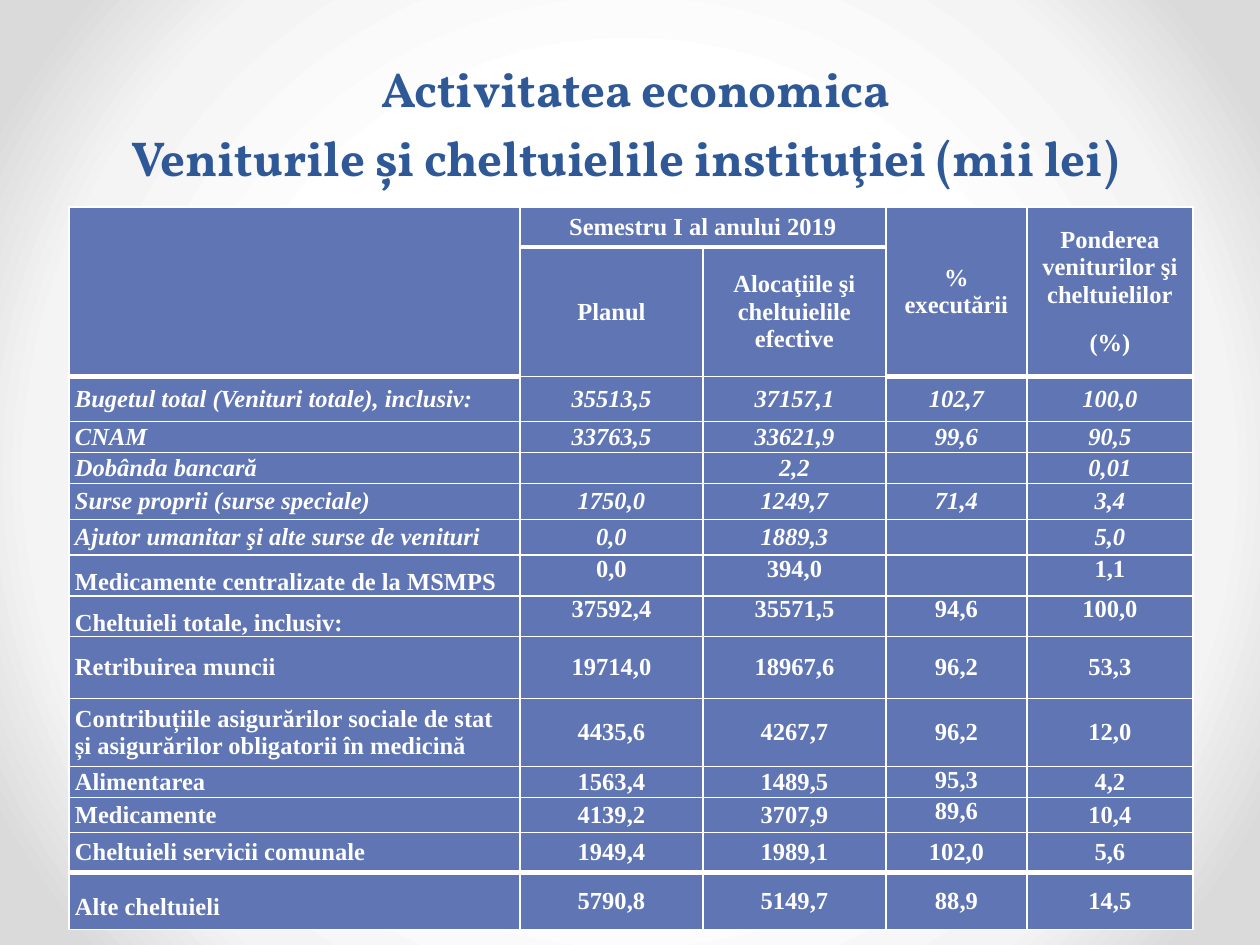
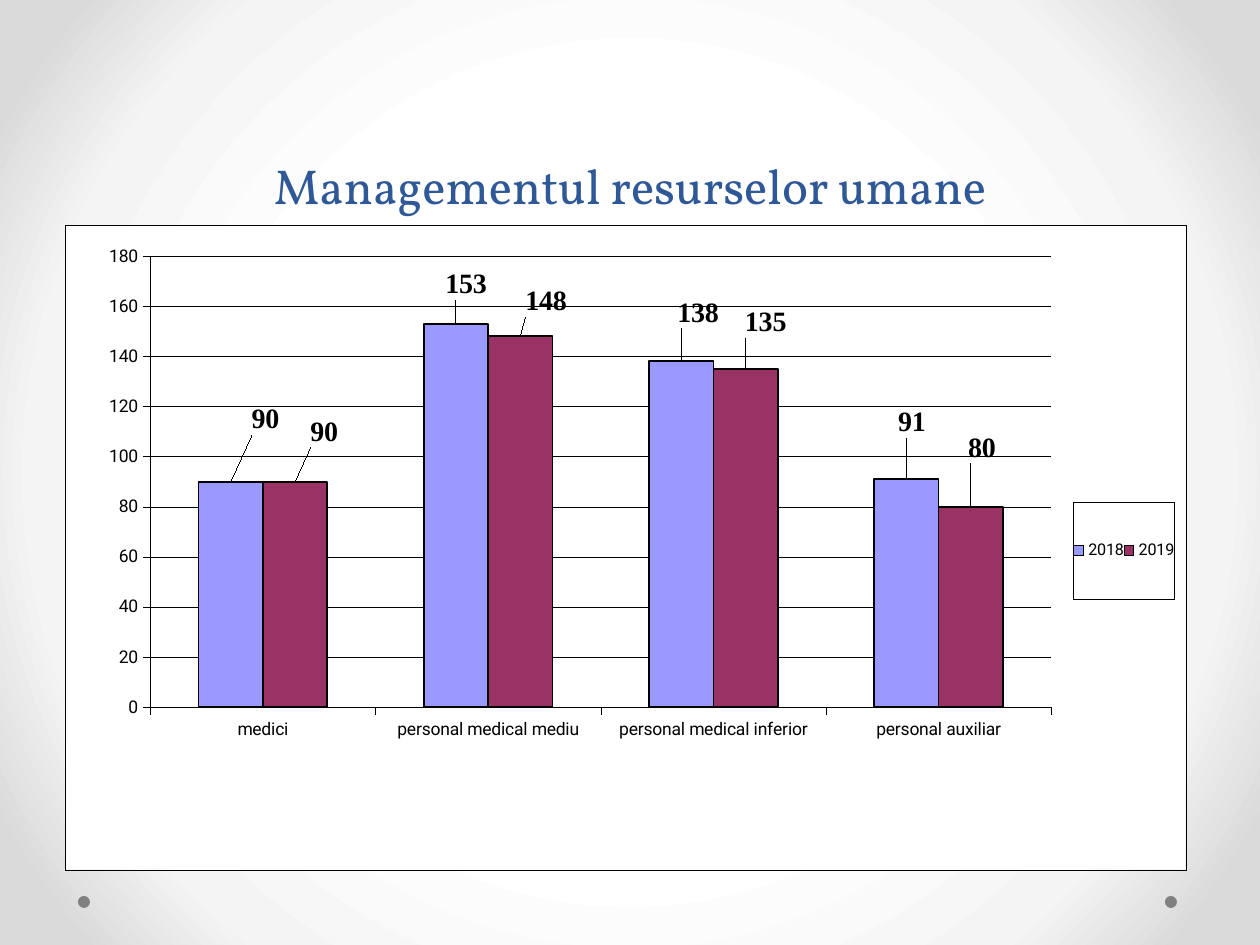
"""Build two slides: a semester budget table and a staff column chart."""
from pptx import Presentation, util as u
from pptx.chart.data import CategoryChartData
from pptx.dml.color import RGBColor
from pptx.enum import chart as ch, shapes, text
from pptx.oxml import parse_xml
from pptx.oxml.ns import nsdecls, qn

WHITE, BLACK, BLUE, TITLE_BLUE, GREY = "FFFFFF", "000000", "6076B4", "2F5897", "808080"
SERIF, DISPLAY, SANS = "Times New Roman", "Vollkorn", "Roboto"


def px(count):
    return u.Emu(round(count * 914400 / 126))


def paint(target, color, size=None, name=None, bold=False, italic=False):
    """Colour a fill, or a line of the given width, or a font with the given name."""
    if name:
        target.name, target.size, target.bold, target.italic = name, u.Pt(size), bold, italic
        target.color.rgb = RGBColor.from_string(color)
        return
    if size:
        target.width = u.Pt(size)
    fill = target.fill if size else target
    fill.solid()
    fill.fore_color.rgb = RGBColor.from_string(color)


deck = Presentation()
deck.slide_width, deck.slide_height = px(1260), px(945)

stops = "".join(
    f'<a:gs pos="{place}000"><a:srgbClr val="{color}"/></a:gs>'
    for place, color in ((50, WHITE), (76, "F4F4F4"), (92, "DADADA"))
)
common = deck.slide_master.element.find(qn("p:cSld"))
for backdrop in common.findall(qn("p:bg")):
    common.remove(backdrop)
common.insert(0, parse_xml(
    f'<p:bg {nsdecls("p", "a")}><p:bgPr><a:gradFill rotWithShape="1"><a:gsLst>{stops}</a:gsLst>'
    '<a:path path="circle"><a:fillToRect l="50000" t="50000" r="50000" b="50000"/></a:path>'
    '</a:gradFill><a:effectLst/></p:bgPr></p:bg>'
))

pages, headings = [], []
for wording, top, height, bold in (
    ("Veniturile și cheltuielile instituţiei (mii lei) ", 134, 59, True),
    ("Managementul resurselor umane", 0, 221, False),
):
    page = deck.slides.add_slide(deck.slide_layouts[5])
    title = page.shapes.title
    title.left, title.top, title.width, title.height = px(63), px(top), px(1134), px(height)
    for left in (1165, 78):
        dot = page.shapes.add_shape(shapes.MSO_SHAPE.OVAL, px(left), px(896), px(12), px(12))
        dot.shadow.inherit = False
        paint(dot.fill, GREY)
        dot.line.fill.background()
    pages.append(page)
    headings.append((title, wording, bold))
budget_page, staff_page = pages

column_widths = (451, 183, 183, 141, 166)
row_heights = (40, 106, 45, 31, 31, 36, 36, 40, 35, 62, 68, 31, 35, 40, 57)
budget = (
    ("", "Semestru I al anului 2019", "", "% executării", "Ponderea veniturilor şi cheltuielilor\n(%)"),
    ("", "Planul", "Alocaţiile şi cheltuielile\nefective", "", ""),
    ("Bugetul total (Venituri totale), inclusiv:", "35513,5", "37157,1", "102,7", "100,0"),
    ("CNAM", "33763,5", "33621,9", "99,6", "90,5"),
    ("Dobânda bancară", "", "2,2", "", "0,01"),
    ("Surse proprii (surse speciale)", "1750,0", "1249,7", "71,4", "3,4"),
    ("Ajutor umanitar şi alte surse de venituri", "0,0", "1889,3", "", "5,0"),
    ("Medicamente centralizate de la MSMPS", "0,0", "394,0", "", "1,1"),
    ("Cheltuieli totale, inclusiv:", "37592,4", "35571,5", "94,6", "100,0"),
    ("Retribuirea muncii", "19714,0", "18967,6", "96,2", "53,3"),
    ("Contribuțiile asigurărilor sociale de stat și asigurărilor obligatorii în medicină",
     "4435,6", "4267,7", "96,2", "12,0"),
    ("Alimentarea", "1563,4", "1489,5", "95,3", "4,2"),
    ("Medicamente", "4139,2", "3707,9", "89,6", "10,4"),
    ("Cheltuieli servicii comunale", "1949,4", "1989,1", "102,0", "5,6"),
    ("Alte cheltuieli", "5790,8", "5149,7", "88,9", "14,5"),
)
thick_tops = {(row, column) for row in (1, 14) for column in range(5)}
thick_tops |= {(2, column) for column in (0, 3, 4)}

table = budget_page.shapes.add_table(
    len(budget), 5, px(69), px(207), px(sum(column_widths)), px(sum(row_heights))
).table
table.first_row = table.horz_banding = False
for column, width in enumerate(column_widths):
    table.columns[column].width = px(width)
for row, (height, entries) in enumerate(zip(row_heights, budget)):
    table.rows[row].height = px(height)
    for column, entry in enumerate(entries):
        cell = table.cell(row, column)
        cell.text_frame.text = entry
        cell.margin_left = cell.margin_right = px(6)
        cell.margin_top = cell.margin_bottom = 0
        cell.vertical_anchor = text.MSO_ANCHOR.MIDDLE
        if row in (7, 8):
            cell.vertical_anchor = text.MSO_ANCHOR.TOP if column else text.MSO_ANCHOR.BOTTOM
        elif row in (11, 12) and column == 3:
            cell.vertical_anchor = text.MSO_ANCHOR.TOP
        for para in cell.text_frame.paragraphs:
            para.alignment = text.PP_ALIGN.CENTER if column else text.PP_ALIGN.LEFT
            if row in (0, 2) and column in (0, 3, 4):
                para.space_before = para.space_after = u.Pt(6)
            if row in (7, 8, 14) and column == 0:
                para.line_spacing = 1.5
            for span in para.runs:
                paint(span.font, WHITE, 14, SERIF, True, 2 <= row <= 6)
            if not para.runs:
                para._p.append(parse_xml(f'<a:endParaRPr {nsdecls("a")} sz="1400"/>'))
        paint(cell.fill, BLUE)
        thick = {"T": (row, column) in thick_tops, "B": (row + 1, column) in thick_tops}
        for order, side in enumerate("LRTB"):
            weight = 38100 if thick.get(side) else 12700
            cell._tc.get_or_add_tcPr().insert(order, parse_xml(
                f'<a:ln{side} {nsdecls("a")} w="{weight}"><a:solidFill><a:srgbClr val="{WHITE}"/>'
                f'</a:solidFill></a:ln{side}>'
            ))
table.cell(0, 1).merge(table.cell(0, 2))
for column in (0, 3, 4):
    table.cell(0, column).merge(table.cell(1, column))

box = budget_page.shapes.add_textbox(px(74), px(45), px(1123), px(79))
headings.append((box, "Activitatea economica", True))
for shape, wording, bold in headings:
    frame = shape.text_frame
    frame.text = wording
    frame.word_wrap = True
    frame.auto_size = text.MSO_AUTO_SIZE.NONE
    frame.vertical_anchor = text.MSO_ANCHOR.BOTTOM
    para = frame.paragraphs[0]
    para.alignment = text.PP_ALIGN.CENTER
    para.line_spacing = u.Pt(58)
    paint(para.runs[0].font, TITLE_BLUE, 28, DISPLAY, bold)

staff = CategoryChartData()
staff.categories = ("medici", "personal medical mediu", "personal medical inferior", "personal auxiliar")
staff.add_series("2018", (90, 153, 138, 91))
staff.add_series("2019", (90, 148, 135, 80))
chart = staff_page.shapes.add_chart(
    ch.XL_CHART_TYPE.COLUMN_CLUSTERED, px(65), px(225), px(1121), px(645), staff
).chart
chart.has_title = False
paint(chart.font, BLACK, 10, SANS)
chart.has_legend = True
legend = chart.legend
legend.position = ch.XL_LEGEND_POSITION.RIGHT
legend.include_in_layout = False
paint(legend.font, BLACK, 9.2, SANS)

for axis in (chart.category_axis, chart.value_axis):
    axis.major_tick_mark = ch.XL_TICK_MARK.OUTSIDE
    axis.minor_tick_mark = ch.XL_TICK_MARK.NONE
    paint(axis.format.line, BLACK, 0.25)
    paint(axis.tick_labels.font, BLACK, 10, SANS)
chart.category_axis.tick_label_position = ch.XL_TICK_LABEL_POSITION.LOW
values = chart.value_axis
values.minimum_scale, values.maximum_scale, values.major_unit = 0, 180, 20
values.has_major_gridlines = True
paint(values.major_gridlines.format.line, BLACK, 0.25)

plot = chart.plots[0]
plot.gap_width, plot.overlap, plot.vary_by_categories = 150, 0, False
plot_area = chart._chartSpace.find(".//" + qn("c:plotArea"))
layouts = [
    (plot_area, 0, {"layoutTarget": "inner", "xMode": "edge", "yMode": "edge",
                    "x": 0.076, "y": 0.048, "w": 0.804, "h": 0.7}),
    (legend._element, 1, {"xMode": "edge", "yMode": "edge", "x": 0.9, "y": 0.43, "w": 0.09, "h": 0.15}),
]
label_shifts = (
    ((35, -41), (10, -19), (17, -28), (6, -36)),
    ((29, -29), (26, -14), (20, -26), (11, -38)),
)
for series, color, shifts in zip(plot.series, ("9999FF", "993366"), label_shifts):
    paint(series.format.fill, color)
    paint(series.format.line, BLACK, 1)
    for index in range(len(shifts)):
        label = series.points[index].data_label
        paint(label.font, BLACK, 16, SERIF, True)
        label.position = ch.XL_LABEL_POSITION.OUTSIDE_END
    for node, (right, down) in zip(series._element.iter(qn("c:dLbl")), shifts):
        layouts.append((node, 1, {"x": round(right / 1121, 3), "y": round(down / 645, 3)}))

for parent, order, settings in layouts:
    for old in parent.findall(qn("c:layout")):
        parent.remove(old)
    parts = "".join(f'<c:{key} val="{value}"/>' for key, value in settings.items())
    parent.insert(order, parse_xml(
        f'<c:layout {nsdecls("c")}><c:manualLayout>{parts}</c:manualLayout></c:layout>'
    ))

for anchor in (chart._chartSpace.find(qn("c:chart")), legend._element.find(qn("c:overlay"))):
    anchor.addnext(parse_xml(
        f'<c:spPr {nsdecls("c", "a")}><a:solidFill><a:srgbClr val="{WHITE}"/></a:solidFill>'
        f'<a:ln w="3175"><a:solidFill><a:srgbClr val="{BLACK}"/></a:solidFill></a:ln></c:spPr>'
    ))

deck.save("out.pptx")
